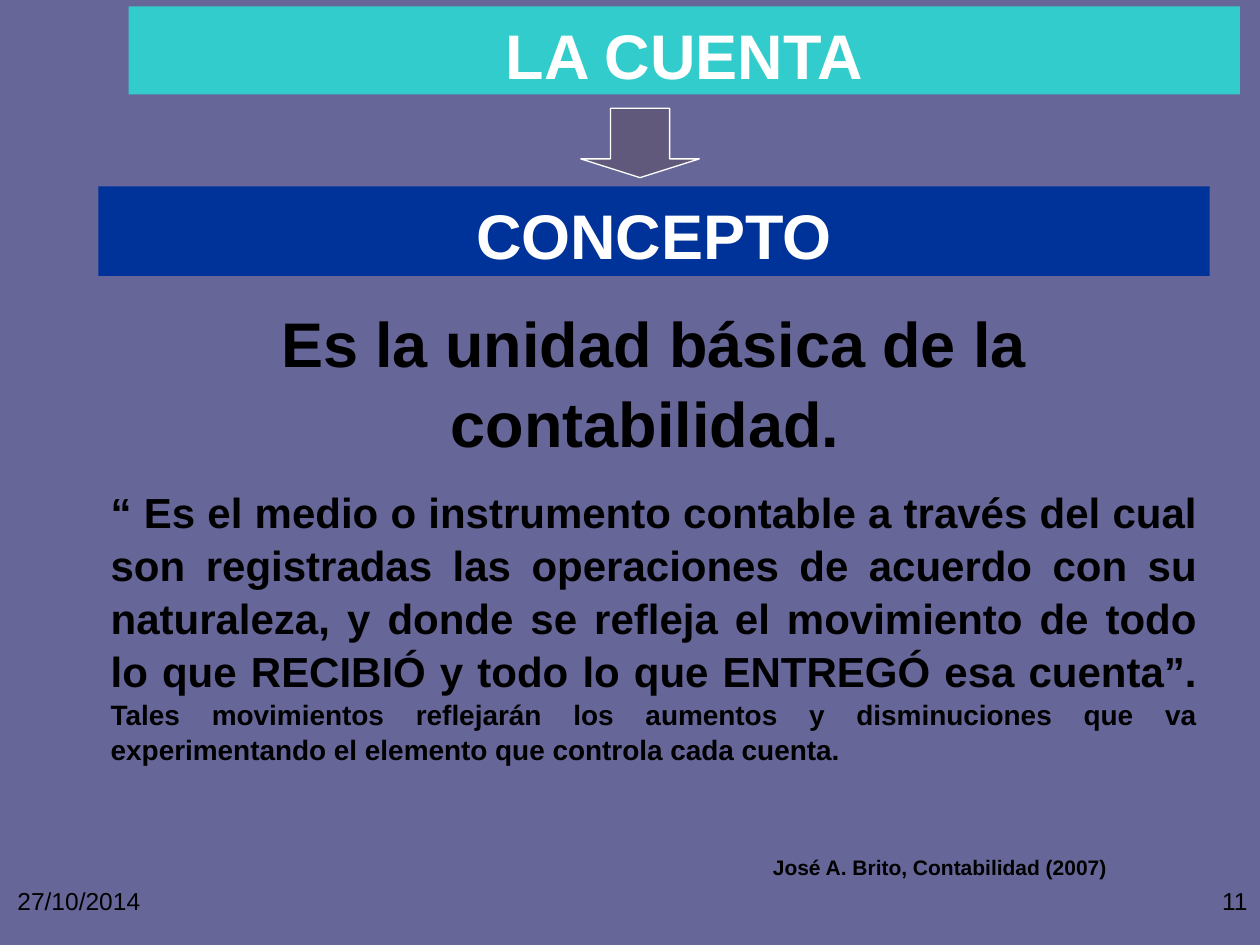
from pptx import Presentation
from pptx.dml.color import RGBColor
from pptx.enum.shapes import MSO_SHAPE as Form
from pptx.enum.text import MSO_ANCHOR as Anchor, PP_ALIGN as Align
from pptx.util import Inches, Pt


def color(code):
    return RGBColor.from_string(code)


class Deck:
    """Holds the style and the current slide."""

    font = "Arial"
    ink = "000000"
    light = "FFFFFF"

    def __init__(self, slide, back):
        self.slide = slide
        slide.background.fill.solid()
        slide.background.fill.fore_color.rgb = color(back)

    def fill_text(self, frame, paras, tone, bold, lead):
        frame.word_wrap = True
        frame.vertical_anchor = Anchor.TOP
        for i, (align, runs) in enumerate(paras):
            para = frame.paragraphs[0] if i == 0 else frame.add_paragraph()
            para.alignment = align
            para.line_spacing = lead
            if i:
                para.space_before = Pt(14)
            para.font.name = self.font
            para.font.bold = bold
            para.font.color.rgb = color(tone)
            if len(runs) == 1:
                para.font.size = Pt(runs[0][1])
            for words, size in runs:
                run = para.add_run()
                run.text = words
                if len(runs) > 1:
                    run.font.size = Pt(size)

    def text(self, box, paras, bold=False, lead=1.0):
        shape = self.slide.shapes.add_textbox(*map(Inches, box))
        self.fill_text(shape.text_frame, paras, self.ink, bold, lead)

    def shape(self, form, box, fill):
        shape = self.slide.shapes.add_shape(form, *map(Inches, box))
        shape.shadow.inherit = False
        shape.fill.solid()
        shape.fill.fore_color.rgb = color(fill)
        return shape

    def banner(self, box, words, fill):
        shape = self.shape(Form.RECTANGLE, box, fill)
        shape.line.fill.background()
        paras = [(Align.CENTER, [(words, 36)])]
        self.fill_text(shape.text_frame, paras, self.light, True, 1.05)

    def arrow(self, box, fill):
        shape = self.shape(Form.DOWN_ARROW, box, fill)
        shape.adjustments[0] = 0.5
        shape.adjustments[1] = 0.27
        shape.line.color.rgb = color(self.light)
        shape.line.width = Pt(0.75)


def main():
    show = Presentation()
    show.slide_width, show.slide_height = Inches(10), Inches(7.5)
    deck = Deck(show.slides.add_slide(show.slide_layouts[6]), "666699")

    deck.text((0.04, 6.98, 2.33, 0.52), [(Align.LEFT, [("27/10/2014", 14)])])
    deck.text((7.67, 6.98, 2.33, 0.52), [(Align.RIGHT, [("11", 14)])])
    deck.banner((1.02, 0.05, 8.82, 0.7), "LA CUENTA", "33CCCC")
    deck.banner((0.78, 1.48, 8.82, 0.71), "CONCEPTO", "003399")
    deck.arrow((4.61, 0.86, 0.94, 0.55), "60597B")

    quote = (
        "“ Es el medio o instrumento contable a través del cual son registradas "
        "las operaciones de acuerdo con su naturaleza, y donde se refleja el "
        "movimiento de todo lo que RECIBIÓ y todo lo que ENTREGÓ esa cuenta”. "
    )
    detail = (
        "Tales movimientos reflejarán los aumentos y disminuciones que va "
        "experimentando el elemento que controla cada cuenta."
    )
    paras = [
        (Align.CENTER, [("Es la unidad básica de la contabilidad. ", 36)]),
        (Align.JUSTIFY, [(quote, 24), (detail, 16)]),
    ]
    deck.text((0.78, 2.34, 8.82, 3.8), paras, bold=True, lead=1.05)
    source = [(Align.CENTER, [("José A. Brito, Contabilidad (2007)", 12)])]
    deck.text((5.31, 6.73, 4.3, 0.3), source, bold=True)
    show.save("out.pptx")


if __name__ == "__main__":
    main()
